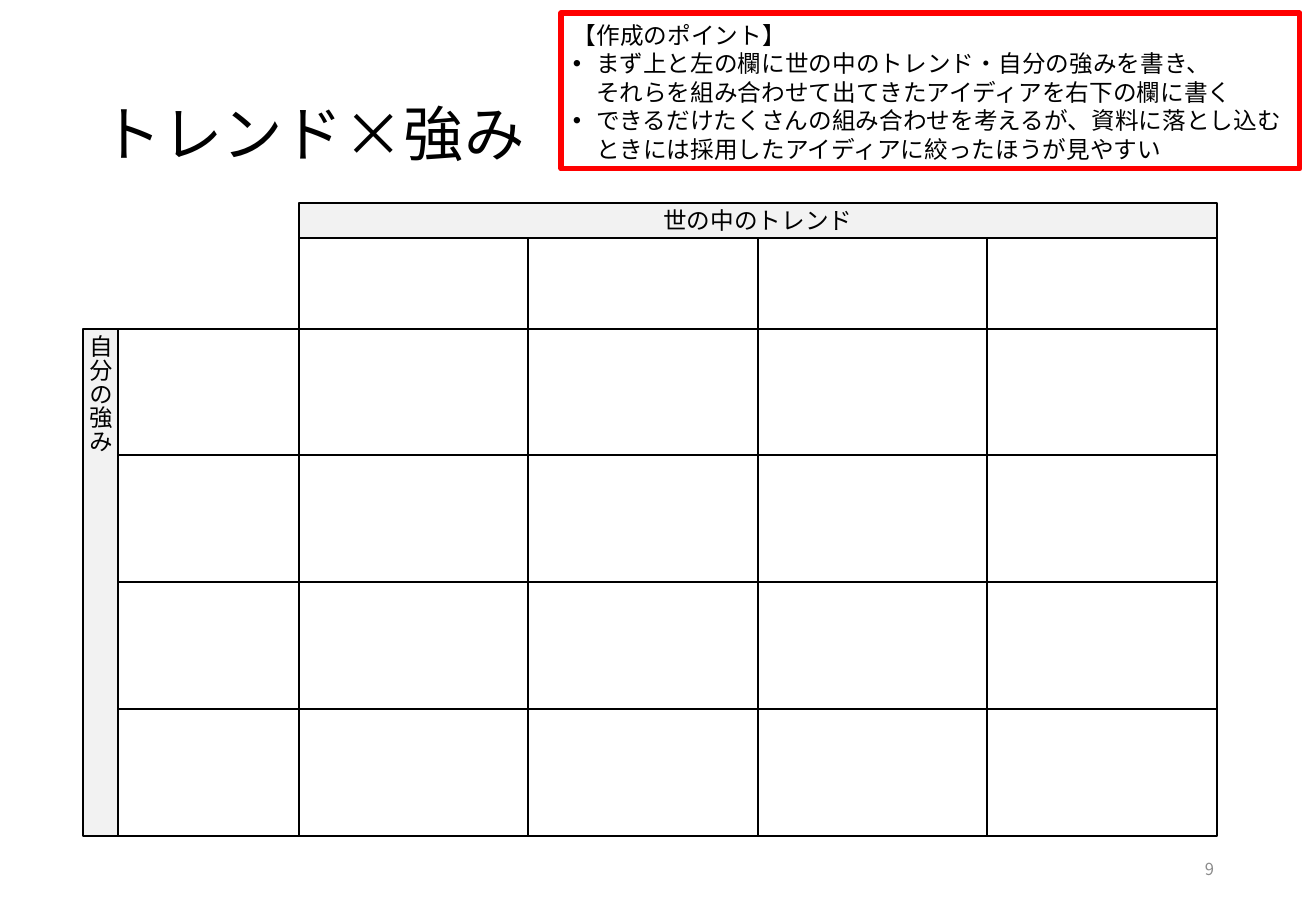
from dataclasses import dataclass
from itertools import product

from lxml.etree import SubElement
from pptx import Presentation
from pptx.dml.color import RGBColor
from pptx.enum.shapes import MSO_SHAPE
from pptx.enum.text import MSO_ANCHOR, PP_ALIGN
from pptx.oxml.ns import qn
from pptx.shapes.autoshape import Shape
from pptx.slide import Slide
from pptx.util import Emu, Pt

SCALE = 7526
FONT = "Noto Sans CJK JP"
BLACK = RGBColor(0x00, 0x00, 0x00)
WHITE = RGBColor(0xFF, 0xFF, 0xFF)
PALE = RGBColor(0xF2, 0xF2, 0xF2)
GRAY = RGBColor(0x8C, 0x8C, 0x8C)
RED = RGBColor(0xFF, 0x00, 0x00)


@dataclass(frozen=True)
class Box:
    left: int
    top: int
    right: int
    bottom: int
    fill: RGBColor = WHITE
    line: RGBColor = BLACK
    width: int = 1


@dataclass(frozen=True)
class Text:
    lines: tuple[str, ...]
    size: float = 14
    color: RGBColor = BLACK
    align: PP_ALIGN = PP_ALIGN.LEFT
    pitch: float | Pt | None = None
    bullet: bool = False


def px(value: int) -> Emu:
    return Emu(value * SCALE)


def place(box: Box) -> tuple[Emu, Emu, Emu, Emu]:
    return (px(box.left), px(box.top),
            px(box.right - box.left), px(box.bottom - box.top))


def draw_box(slide: Slide, box: Box) -> Shape:
    shape = slide.shapes.add_shape(MSO_SHAPE.RECTANGLE, *place(box))
    shape.shadow.inherit = False
    shape.fill.solid()
    shape.fill.fore_color.rgb = box.fill
    shape.line.color.rgb = box.line
    shape.line.width = Pt(box.width)
    return shape


def write(shape: Shape, texts: list[Text], side: int = 12, top: int = 6,
          anchor: MSO_ANCHOR = MSO_ANCHOR.MIDDLE) -> None:
    frame = shape.text_frame
    frame.word_wrap = True
    frame.vertical_anchor = anchor
    frame.margin_left = frame.margin_right = px(side)
    frame.margin_top, frame.margin_bottom = px(top), px(6)
    for order, text in enumerate(texts):
        para = frame.add_paragraph() if order else frame.paragraphs[0]
        para.alignment = text.align
        para.line_spacing = text.pitch
        if text.bullet:
            props = para._p.get_or_add_pPr()
            props.set("marL", str(px(23)))
            props.set("indent", str(px(-23)))
            SubElement(props, qn("a:buFont"), typeface="Arial")
            SubElement(props, qn("a:buChar"), char="•")
        for row, line in enumerate(text.lines):
            if row:
                para.add_line_break()
            run = para.add_run()
            run.text = line
            run.font.size = Pt(text.size)
            run.font.name = FONT
            run.font.color.rgb = text.color
            SubElement(run.font._element, qn("a:ea"), typeface=FONT)


def label(slide: Slide, box: Box, text: Text) -> None:
    write(slide.shapes.add_textbox(*place(box)), [text])


def draw_grid(slide: Slide) -> None:
    cols = [118] + [299 + 918 * step // 4 for step in range(5)]
    rows = [238] + [329 + 507 * step // 4 for step in range(5)]
    for row, col in product(range(5), range(5)):
        if row or col:
            draw_box(slide, Box(cols[col], rows[row],
                                cols[col + 1], rows[row + 1]))


def main() -> None:
    deck = Presentation()
    deck.slide_width, deck.slide_height = px(1316), px(911)
    slide = deck.slides.add_slide(deck.slide_layouts[6])

    label(slide, Box(90, 87, 1225, 187),
          Text(("トレンド×強み",), 35.8, pitch=0.9))
    label(slide, Box(929, 844, 1226, 893),
          Text(("9",), 9.8, GRAY, PP_ALIGN.RIGHT))

    tips = draw_box(slide, Box(561, 13, 1300, 169, line=RED, width=3))
    pitch = Pt(16.8)
    write(tips, [
        Text(("【作成のポイント】",), pitch=pitch),
        Text(("まず上と左の欄に世の中のトレンド・自分の強みを書き、",
              "それらを組み合わせて出てきたアイディアを右下の欄に書く"),
             pitch=pitch, bullet=True),
        Text(("できるだけたくさんの組み合わせを考えるが、資料に落とし込む"
              "ときには採用したアイディアに絞ったほうが見やすい",),
             pitch=pitch, bullet=True),
    ], top=8, anchor=MSO_ANCHOR.TOP)

    skills = draw_box(slide, Box(83, 329, 118, 836, PALE))
    write(skills, [Text(("自分の強み",))], side=0)
    skills.text_frame._txBody.bodyPr.set("vert", "eaVert")

    trends = draw_box(slide, Box(299, 203, 1217, 238, PALE))
    write(trends, [Text(("世の中のトレンド",), align=PP_ALIGN.CENTER)])

    draw_grid(slide)
    deck.save("out.pptx")


if __name__ == "__main__":
    main()
